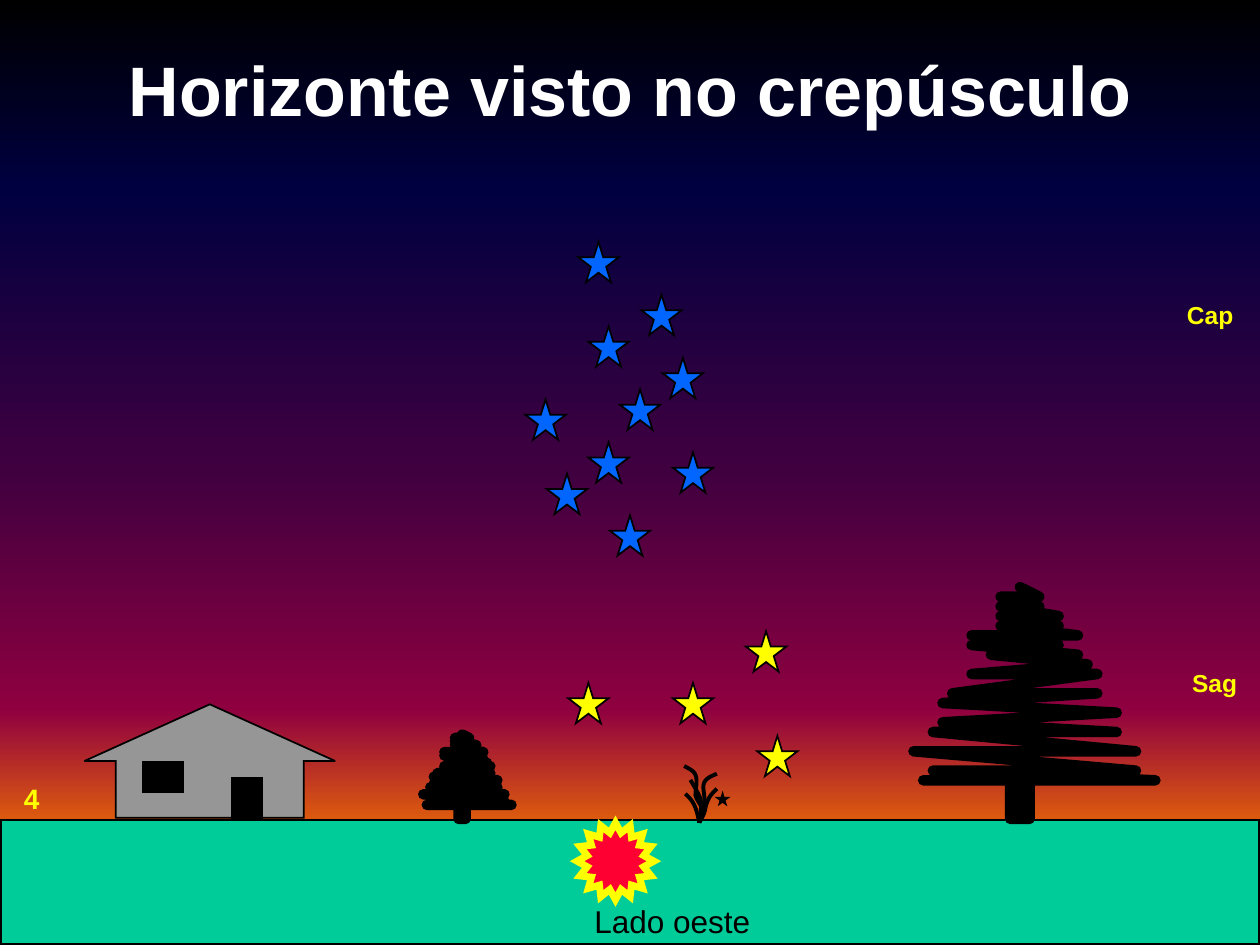
import dataclasses
import lxml.etree
import pptx
import pptx.dml.color
import pptx.enum.shapes
import pptx.enum.text
import pptx.oxml.ns
import pptx.util

Inches = pptx.util.Inches
Form = pptx.enum.shapes.MSO_SHAPE
Align = pptx.enum.text.PP_ALIGN
Anchor = pptx.enum.text.MSO_ANCHOR


@dataclasses.dataclass(frozen=True)
class Theme:
    face: str = "Arial"
    white: str = "FFFFFF"
    black: str = "000000"
    gold: str = "FFFF00"
    blue: str = "0066FF"
    red: str = "FF0033"
    grey: str = "969696"
    green: str = "00CC99"
    title: int = 40
    note: int = 18
    page: int = 16
    label: int = 14
    thin: float = 1
    stem: float = 2.25
    ray: float = 4
    bough: float = 6
    sky: tuple = ((0, "000000"), (20, "000040"), (50, "400040"),
                  (75, "8F0040"), (90, "F27300"), (100, "FFBF00"))


theme = Theme()
STAR = 0.32
TREE = [
    (11, 0), (13, 1), (9, 1), (13, 2), (9, 2), (15, 3), (9, 3), (15, 4), (9, 4),
    (17, 5), (6, 5), (15, 6), (6, 6), (17, 7), (8, 7), (18, 8), (6, 9), (19, 9),
    (4, 11), (19, 11), (3, 12), (21, 13), (3, 14), (21, 15), (2, 15), (23, 17),
    (0, 17), (23, 19), (2, 19), (25, 20), (1, 20), (10, 20), (10, 24), (12, 24),
    (12, 20)]
BLADES = [
    [(0.01, 0.22), (0.04, 0.25), (0.06, 0.27), (0.08, 0.31),
     (0.1, 0.35), (0.11, 0.4), (0.12, 0.45)],
    [(0.05, 0.11), (0.08, 0.16), (0.11, 0.21), (0.13, 0.26),
     (0.14, 0.32), (0.13, 0.39), (0.12, 0.45)],
    [(0.26, 0.18), (0.23, 0.21), (0.2, 0.24), (0.19, 0.27), (0.17, 0.31),
     (0.17, 0.34), (0.16, 0.37), (0.15, 0.4), (0.13, 0.43), (0.12, 0.45)],
    [(0.26, 0.06), (0.22, 0.08), (0.18, 0.09), (0.16, 0.13), (0.14, 0.17),
     (0.17, 0.24), (0.16, 0.28), (0.15, 0.32), (0.14, 0.35), (0.13, 0.37)],
    [(0, 0), (0.04, 0.02), (0.08, 0.04), (0.09, 0.07), (0.11, 0.11),
     (0.09, 0.19), (0.09, 0.23), (0.1, 0.27), (0.12, 0.29), (0.13, 0.31)]]


def tint(text):
    return pptx.dml.color.RGBColor.from_string(text)


def apply(item, values):
    for key, value in values.items():
        setattr(item, key, value)


def edge(shape, hue, width, join="miter"):
    shape.shadow.inherit = False
    shape.line.color.rgb = tint(hue)
    shape.line.width = pptx.util.Pt(width)
    line = shape.line._ln
    node = lxml.etree.SubElement(line, pptx.oxml.ns.qn(f"a:{join}"))
    if join == "miter":
        node.set("lim", "800000")
    else:
        line.set("cap", "rnd")


def block(shapes, form, box, fill, line=theme.black, width=theme.thin, adjust=()):
    shape = shapes.add_shape(form, *map(Inches, box))
    shape.fill.solid()
    shape.fill.fore_color.rgb = tint(fill)
    edge(shape, line, width)
    for place, value in enumerate(adjust):
        shape.adjustments[place] = value


def stroke(shapes, points, width, join):
    dots = [(Inches(x), Inches(y)) for x, y in points]
    pen = shapes.build_freeform(*dots[0])
    pen.add_line_segments(dots[1:], close=False)
    shape = pen.convert_to_shape()
    shape.fill.background()
    edge(shape, theme.black, width, join)


def words(shapes, box, text, size, hue, bold=True, wrap=False, anchor=Anchor.TOP):
    frame = shapes.add_textbox(*map(Inches, box)).text_frame
    apply(frame, {"word_wrap": wrap, "vertical_anchor": anchor})
    line = frame.paragraphs[0]
    line.alignment = Align.CENTER
    run = line.add_run()
    run.text = text
    apply(run.font, {"name": theme.face, "size": pptx.util.Pt(size), "bold": bold})
    run.font.color.rgb = tint(hue)


def sky(slide):
    fill = slide.background.fill
    fill.gradient()
    fill.gradient_angle = 270
    stops = slide._element.xpath(".//a:gsLst")[0]
    for old in list(stops):
        stops.remove(old)
    for place, hue in theme.sky:
        stop = lxml.etree.SubElement(stops, pptx.oxml.ns.qn("a:gs"), pos=str(place * 1000))
        lxml.etree.SubElement(stop, pptx.oxml.ns.qn("a:srgbClr"), val=hue)


def ground(shapes, box):
    x, y, w, h = box
    block(shapes, Form.RECTANGLE, box, theme.green)
    block(shapes, Form.STAR_16_POINT, (x + 4.57, y + 0.02, 0.61, 0.61),
          theme.red, theme.gold, theme.ray, (0.375,))
    words(shapes, (x + 4.6, y + 0.6, 1.45, 0.4), "Lado oeste",
          theme.note, theme.black, bold=False)


def tree(shapes, box):
    x, y, w, h = box
    group = shapes.add_group_shape().shapes
    dx, dy = w / 25, h / 24
    stroke(group, [(x + a * dx, y + b * dy) for a, b in TREE], theme.bough, "round")
    block(group, Form.RECTANGLE, (x + 10 * dx, y + 20 * dy, 2 * dx, 4 * dy), theme.black)


def house(shapes, box):
    x, y, w, h = box
    block(shapes, Form.UP_ARROW, box, theme.grey, adjust=(0.75, 0.5))
    for part in [(x + 1.17, y + 0.58, 0.24, 0.32), (x + 0.46, y + 0.46, 0.32, 0.24)]:
        block(shapes, Form.RECTANGLE, part, theme.black)


def curve(points, steps=8):
    dots = [points[0]]
    for at in range(0, len(points) - 1, 3):
        a, b, c, d = points[at:at + 4]
        for step in range(1, steps + 1):
            t = step / steps
            u = 1 - t
            dots.append(tuple(u**3 * p + 3 * u * u * t * q + 3 * u * t * t * r + t**3 * s
                              for p, q, r, s in zip(a, b, c, d)))
    return dots


def grass(shapes, box):
    x, y, w, h = box
    group = shapes.add_group_shape().shapes
    for blade in BLADES:
        dots = [(x + a, y + b) for a, b in curve(blade)]
        stroke(group, dots, theme.stem, "miter")
    block(group, Form.STAR_5_POINT, (x + 0.29, y + 0.25, 0.03, 0.03),
          theme.gold, width=theme.stem)


def stars(shapes, box, spots, hue):
    x, y, w, h = box
    for a, b in spots:
        block(shapes, Form.STAR_5_POINT, (x + a, y + b, STAR, STAR), hue)


def main():
    deck = pptx.Presentation()
    apply(deck, {"slide_width": Inches(10), "slide_height": Inches(7.5)})
    slide = deck.slides.add_slide(deck.slide_layouts[6])
    shapes = slide.shapes
    sky(slide)
    words(shapes, (0, 0.08, 10, 1.25), "Horizonte visto no crepúsculo",
          theme.title, theme.white, wrap=True, anchor=Anchor.MIDDLE)
    ground(shapes, (0.01, 6.51, 9.98, 0.98))
    tree(shapes, (7.25, 4.66, 1.92, 1.84))
    house(shapes, (0.67, 5.59, 1.99, 0.9))
    tree(shapes, (3.36, 5.83, 0.7, 0.67))
    stars(shapes, (4.51, 5.01, 1.82, 1.15),
          [(1.41, 0), (0.83, 0.41), (1.5, 0.83), (0, 0.41)], theme.gold)
    stars(shapes, (4.17, 1.92, 1.49, 2.49),
          [(0.17, 1.84), (1.17, 1.67), (0.67, 2.17), (0.5, 1.59), (0, 1.25),
           (1.09, 0.92), (0.5, 0.67), (0.92, 0.42), (0.75, 1.17), (0.42, 0)], theme.blue)
    words(shapes, (0.09, 6.15, 0.32, 0.37), "4", theme.page, theme.gold)
    words(shapes, (9.32, 2.33, 0.57, 0.33), "Cap", theme.label, theme.gold)
    words(shapes, (9.36, 5.25, 0.56, 0.33), "Sag", theme.label, theme.gold)
    grass(shapes, (5.43, 6.08, 0.32, 0.45))
    deck.save("out.pptx")


if __name__ == "__main__":
    main()
